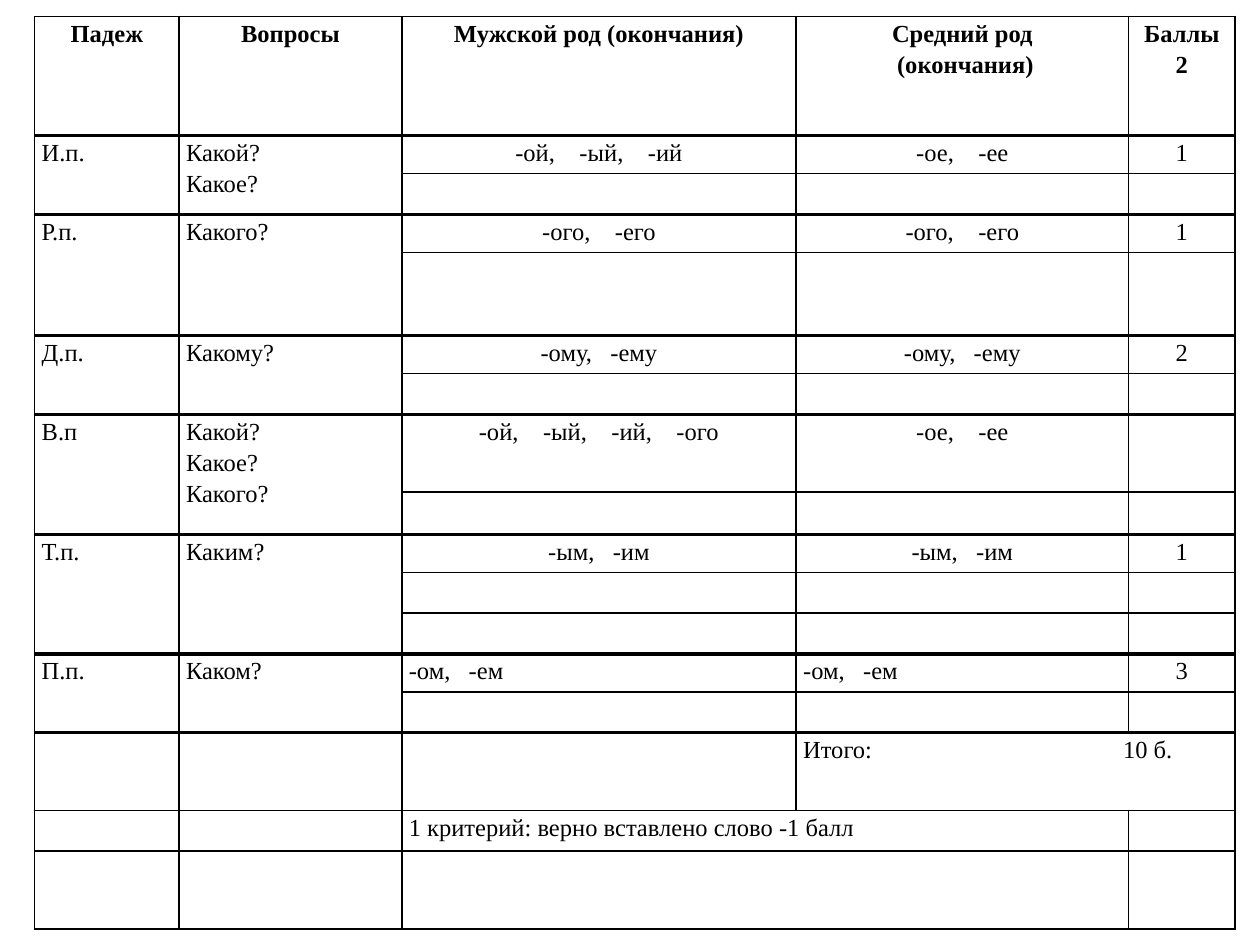
from lxml import etree
from pptx import Presentation, util as u
from pptx.dml.color import RGBColor
from pptx.enum import text
from pptx.oxml import ns

COLUMNS = [2.91, 4.49, 7.95, 6.7, 2.15]
ROWS = [2.4, 0.77, 0.82, 0.77, 1.67, 0.77, 0.82, 1.57, 0.85,
        0.77, 0.82, 0.82, 0.77, 0.82, 1.57, 0.82, 1.57]
HEADER = ["Падеж", "Вопросы", "Мужской род (окончания)",
          "Средний род\n (окончания)", "Баллы\n2"]
# Row count, then the text of the first row
CASES = [
    (2, ["И.п.", "Какой?\nКакое?", "-ой,    -ый,    -ий", "-ое,    -ее", "1"]),
    (2, ["Р.п.", "Какого?", "-ого,    -его", "-ого,    -его", "1"]),
    (2, ["Д.п.", "Какому?", "-ому,   -ему", "-ому,   -ему", "2"]),
    (2, ["В.п", "Какой?\nКакое?\nКакого?",
         "-ой,    -ый,    -ий,    -ого", "-ое,    -ее", ""]),
    (3, ["Т.п.", "Каким?", "-ым,   -им", "-ым,   -им", "1"]),
    (2, ["П.п.", "Каком?", "-ом,   -ем", "-ом,   -ем", "3"]),
]
LAST_CASE_ROW = 12
TOTAL_ROW = 14


def color(value):
    return RGBColor.from_string(value)


class Deck:
    font = "Times New Roman"
    size = 14
    ink = "000000"
    thin, thick = 1, 2.25

    def __init__(self, width, height):
        self.prs = Presentation()
        self.prs.slide_width, self.prs.slide_height = u.Cm(width), u.Cm(height)
        self.s = self.prs.slides.add_slide(self.prs.slide_layouts[6])

    def table(self, left, top, columns, rows):
        frame = self.s.shapes.add_table(
            len(rows), len(columns), u.Cm(left), u.Cm(top),
            u.Cm(sum(columns)), u.Cm(sum(rows)))
        table = frame.table
        table.first_row = table.horz_banding = False
        for column, width in zip(table.columns, columns):
            column.width = u.Cm(width)
        for row, height in zip(table.rows, rows):
            row.height = u.Cm(height)
        return table

    def cell(self, cell, content, centred, bold):
        cell.margin_left = cell.margin_right = u.Cm(0.14)
        cell.margin_top = cell.margin_bottom = 0
        cell.fill.background()
        cell.text_frame.text = content
        for p in cell.text_frame.paragraphs:
            p.line_spacing = 1.15
            p.alignment = text.PP_ALIGN.CENTER if centred else text.PP_ALIGN.LEFT
            p.font.name, p.font.size = self.font, u.Pt(self.size)
            p.font.bold = bold
            p.font.color.rgb = color(self.ink)

    def borders(self, cell, top, bottom):
        """Draw thin sides, with the given widths above and below."""
        properties = cell._tc.get_or_add_tcPr()
        widths = {"lnL": self.thin, "lnR": self.thin, "lnT": top, "lnB": bottom}
        for i, (side, width) in enumerate(widths.items()):
            line = etree.Element(ns.qn(f"a:{side}"), w=str(u.Pt(width)))
            fill = etree.SubElement(line, ns.qn("a:solidFill"))
            etree.SubElement(fill, ns.qn("a:srgbClr"), val=self.ink)
            properties.insert(i, line)

    def tab_stop(self, p, position):
        tabs = etree.Element(ns.qn("a:tabLst"))
        etree.SubElement(tabs, ns.qn("a:tab"), pos=str(u.Cm(position)), algn="l")
        p._p.pPr.find(ns.qn("a:defRPr")).addprevious(tabs)


def main():
    deck = Deck(25.4, 19.05)
    table = deck.table(0.7, 0.33, COLUMNS, ROWS)

    contents = {(0, c): title for c, title in enumerate(HEADER)}
    spans = {}  # top-left cell: (rows, columns)
    row = 1
    thick_tops = {TOTAL_ROW}
    for count, texts in CASES:
        thick_tops.add(row)
        contents.update({(row, c): content for c, content in enumerate(texts)})
        spans.update({(row, c): (count, 1) for c in (0, 1)})
        row += count
    contents[TOTAL_ROW, 3] = "Итого:\t10 б."
    contents[TOTAL_ROW + 1, 2] = "1 критерий: верно вставлено слово -1 балл"
    spans.update({(TOTAL_ROW, 3): (1, 2), (TOTAL_ROW + 1, 2): (1, 2),
                  (TOTAL_ROW + 2, 2): (1, 2)})

    def edge(r):
        return deck.thick if r in thick_tops else deck.thin

    for r in range(len(ROWS)):
        for c in range(len(COLUMNS)):
            cell = table.cell(r, c)
            centred = r == 0 or c == 4 or (c >= 2 and r < LAST_CASE_ROW)
            deck.cell(cell, contents.get((r, c), ""), centred, bold=r == 0)
            height = spans.get((r, c), (1, 1))[0]
            deck.borders(cell, edge(r), edge(r + height))
    for (r, c), (height, width) in spans.items():
        table.cell(r, c).merge(table.cell(r + height - 1, c + width - 1))
    deck.tab_stop(table.cell(TOTAL_ROW, 3).text_frame.paragraphs[0], 6.45)

    deck.prs.save("out.pptx")


if __name__ == "__main__":
    main()
